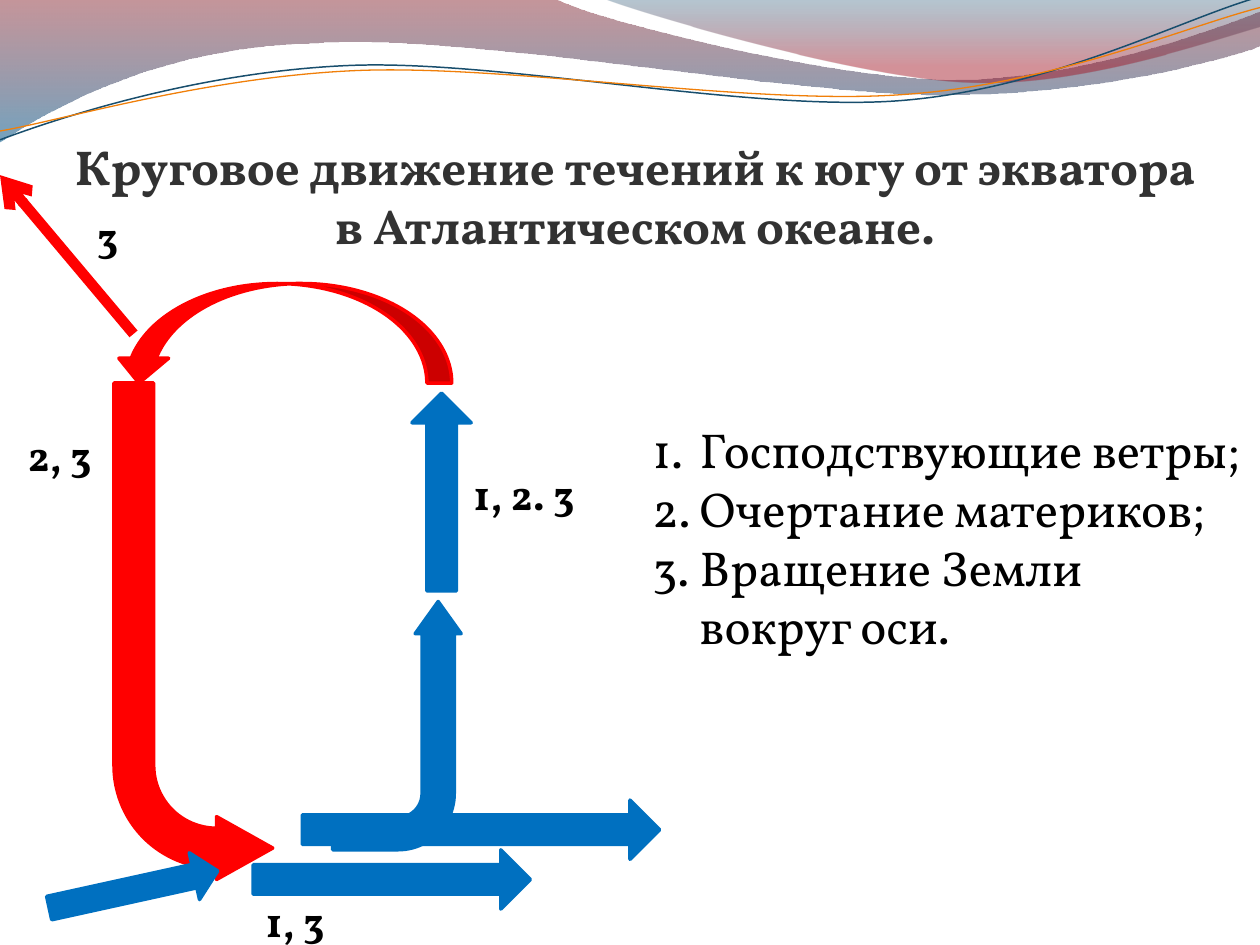
"""Build the slide on the circular currents south of the equator in the Atlantic."""
from math import cos, radians, sin

from lxml.etree import SubElement
from pptx import Presentation
from pptx.dml.color import RGBColor
from pptx.enum.shapes import MSO_CONNECTOR, MSO_SHAPE
from pptx.enum.text import MSO_ANCHOR, MSO_AUTO_SIZE, PP_ALIGN
from pptx.oxml.ns import qn
from pptx.util import Inches, Pt

COLS, ROWS = 100, 75
CELL = Inches(0.1)
FONT = "Vollkorn"
TILT = 357.3
COLORS = {
    "warm": "FF0000", "cold": "0070C0", "title": "323232", "text": "000000",
    "navy": "184E6D", "orange": "F07F09", "wine": "7E1621", "sea": "005689",
    "deep": "094467", "ruby": "A10F1F",
}


def rgb(name):
    """Return the named colour."""
    return RGBColor.from_string(COLORS[name])


def cells(*values):
    """Turn grid columns and rows into EMU lengths."""
    return [int(v * CELL) for v in values]


def add_outline(slide, start, parts, closed):
    """Add a freeform; a part is a list of one point or of two controls and an end."""
    fb = slide.shapes.build_freeform(*cells(*start))
    fb.add_line_segments([cells(*part[-1]) for part in parts], close=closed)
    sp = fb.convert_to_shape()
    sp.shadow.inherit = False
    lines = list(sp.element.iter(qn("a:lnTo")))
    for line, part in zip(lines, parts):
        if len(part) == 3:
            curve = SubElement(line.getparent(), qn("a:cubicBezTo"))
            line.getparent().replace(line, curve)
            for point in part:
                x, y = cells(*point)
                SubElement(curve, qn("a:pt"), x=str(x - sp.left), y=str(y - sp.top))
    return sp


def add_band(slide, start, parts, stops):
    """Add a wave band with a translucent top-to-bottom gradient."""
    sp = add_outline(slide, start, parts, True)
    sp.line.fill.background()
    sp.fill.gradient()
    sp.fill.gradient_angle = 270
    for stop, (pos, color, _) in zip(sp.fill.gradient_stops, stops):
        stop.position = pos
        stop.color.rgb = rgb(color)
    for clr, (_, _, opacity) in zip(sp.element.iter(qn("a:srgbClr")), stops):
        SubElement(clr, qn("a:alpha"), val=str(opacity * 1000))


def turn(point, center, angle):
    """Rotate a point clockwise around a center."""
    a = radians(angle)
    x, y = point[0] - center[0], point[1] - center[1]
    return center[0] + x * cos(a) - y * sin(a), center[1] + x * sin(a) + y * cos(a)


def add_wave(slide, start, parts, center, color, width):
    """Add a thin wavy line as a tilted shape."""
    level = [[turn(p, center, -TILT) for p in part] for part in parts]
    sp = add_outline(slide, turn(start, center, -TILT), level, False)
    sp.rotation = TILT
    sp.fill.background()
    sp.line.color.rgb = rgb(color)
    sp.line.width = Pt(width)


def add_current(slide, kind, box, color, rot=0, flip=None, adj=()):
    """Add a block arrow for an ocean current."""
    sp = slide.shapes.add_shape(kind, *cells(*box))
    sp.shadow.inherit = False
    sp.rotation = rot
    sp.fill.solid()
    sp.fill.fore_color.rgb = rgb(color)
    sp.line.color.rgb = rgb(color)
    sp.line.width = Pt(2)
    for i, value in enumerate(adj):
        sp.adjustments[i] = value
    if flip:
        sp.element.spPr.find(qn("a:xfrm")).set(flip, "1")


def add_line_arrow(slide, start, end, color, width):
    """Add a straight line with an open arrowhead at its end."""
    cx = slide.shapes.add_connector(MSO_CONNECTOR.STRAIGHT, *cells(*start, *end))
    cx.line.color.rgb = rgb(color)
    cx.line.width = Pt(width)
    SubElement(cx.element.spPr.find(qn("a:ln")), qn("a:tailEnd"), type="arrow")
    SubElement(cx.element.spPr, qn("a:effectLst"))


def write(p, text, size=24, color="text", bold=False, align=PP_ALIGN.LEFT):
    """Put formatted text in a paragraph."""
    p.text = text
    p.alignment = align
    for r in p.runs:
        r.font.name = FONT
        r.font.size = Pt(size)
        r.font.bold = bold
        r.font.color.rgb = rgb(color)


def add_text(slide, box):
    """Add a wrapping text box and return its frame."""
    tf = slide.shapes.add_textbox(*cells(*box)).text_frame
    tf.word_wrap = True
    return tf


def add_numbered(slide, box, items):
    """Add an automatically numbered list."""
    tf = add_text(slide, box)
    indent = cells(3.75)[0]
    for i, item in enumerate(items):
        p = tf.add_paragraph() if i else tf.paragraphs[0]
        write(p, item, size=28)
        pPr = p._p.get_or_add_pPr()
        pPr.set("marL", str(indent))
        pPr.set("indent", str(-indent))
        SubElement(pPr, qn("a:buFont"), typeface="+mj-lt")
        SubElement(pPr, qn("a:buAutoNum"), type="arabicPeriod")


def format_title(slide, text, box):
    """Place and fill the title above the waves."""
    title = slide.shapes.title
    title.left, title.top, title.width, title.height = cells(*box)
    tf = title.text_frame
    tf.word_wrap = True
    tf.auto_size = MSO_AUTO_SIZE.NONE
    tf.vertical_anchor = MSO_ANCHOR.BOTTOM
    tf.margin_left = tf.margin_right = tf.margin_bottom = 0
    write(tf.paragraphs[0], text, 28, "title", True, PP_ALIGN.CENTER)
    slide.shapes.element.append(title.element)


def draw_waves(slide):
    """Draw the wave decoration along the top edge."""
    add_band(slide, (0, 0), [
        [(44, -0.1)], [(47.6, 1.7), (66.4, 6.3), (75.8, 6.3)],
        [(85.3, 6.3), (95.8, 2.6), (COLS, 0.9)], [(100.1, 3.6)],
        [(98.3, 4.4), (87, 7.6), (74.6, 7.5)], [(62.2, 7.5), (38.2, 2.8), (25.7, 3.4)],
        [(12.9, 3.6), (4.6, 8.3), (-0.1, 11.3)]], [(0, "wine", 45), (1, "sea", 55)])
    add_band(slide, (47.9, -0.1), [
        [(50.9, 1.1), (68.2, 6.2), (76.9, 6.5)],
        [(85.6, 6.9), (96.1, 3.2), (COLS, 2.1)], [(COLS, 0)]],
        [(0, "deep", 30), (0.8, "ruby", 45)])
    add_wave(slide, (0, 11.1), [
        [(4.8, 9.3), (15.8, 5.7), (27.7, 5.2)], [(39.5, 4.7), (59.3, 8.9), (71.3, 8)],
        [(83.3, 7.1), (93.8, 1.5), (99.8, -0.2)]], (49.9, 5.75), "navy", 0.85)
    add_wave(slide, (0, 10.4), [
        [(4.7, 9.6), (16.4, 6.1), (28.3, 5.6)], [(40.3, 5.1), (59.7, 8.4), (71.7, 7.5)],
        [(83.6, 6.7), (94.1, 2.1), (COLS, 0.6)]], (49.95, 5.9), "orange", 0.75)


def draw_currents(slide):
    """Draw the ring of warm and cold currents."""
    bent, right = MSO_SHAPE.BENT_ARROW, MSO_SHAPE.RIGHT_ARROW
    add_current(slide, bent, (9.05, 30.4, 12.6, 39.4), "warm", 180, "flipH",
                (0.25, 0.198, 0.354, 0.704))
    add_current(slide, MSO_SHAPE.CURVED_UP_ARROW, (9.05, 22.5, 26.8, 7.9), "warm", 180)
    add_line_arrow(slide, (10.6, 26.5), (0, 13.9), "warm", 6)
    add_current(slide, bent, (21.65, 52.5, 19.7, 10.2), "cold", 270, "flipV",
                (0.25, 0.179, 0.25, 0.438))
    for box, rot in [((24, 63.5, 28.35, 4.7), 0), ((20.1, 67.45, 22, 4.7), 0),
                     ((3.75, 68.7, 13.7, 3.8), 347.6), ((27.2, 36.7, 15.7, 4.7), 270)]:
        add_current(slide, right, box, "cold", rot)


def main():
    """Assemble and save the slide."""
    prs = Presentation()
    prs.slide_width, prs.slide_height = cells(COLS, ROWS)
    slide = prs.slides.add_slide(prs.slide_layouts[5])
    draw_waves(slide)
    format_title(slide, "Круговое движение течений к югу от экватора "
                 "в Атлантическом океане.", (5, 7.7, 90.8, 12.5))
    draw_currents(slide)
    for text, box, align in [("3", (6.7, 16.2, 8.7, 5), PP_ALIGN.LEFT),
                             ("2, 3", (0, 33.6, 8.25, 5), PP_ALIGN.RIGHT),
                             ("1, 2. 3", (36.6, 36.7, 13.4, 5), PP_ALIGN.LEFT),
                             ("1, 3", (20.1, 70.6, 18.9, 5), PP_ALIGN.LEFT)]:
        write(add_text(slide, box).paragraphs[0], text, bold=True, align=align)
    add_numbered(slide, (50.8, 32.8, 49.2, 19.9),
                 ["Господствующие ветры;", "Очертание материков;",
                  "Вращение Земли\vвокруг оси."])
    prs.save("out.pptx")


if __name__ == "__main__":
    main()
